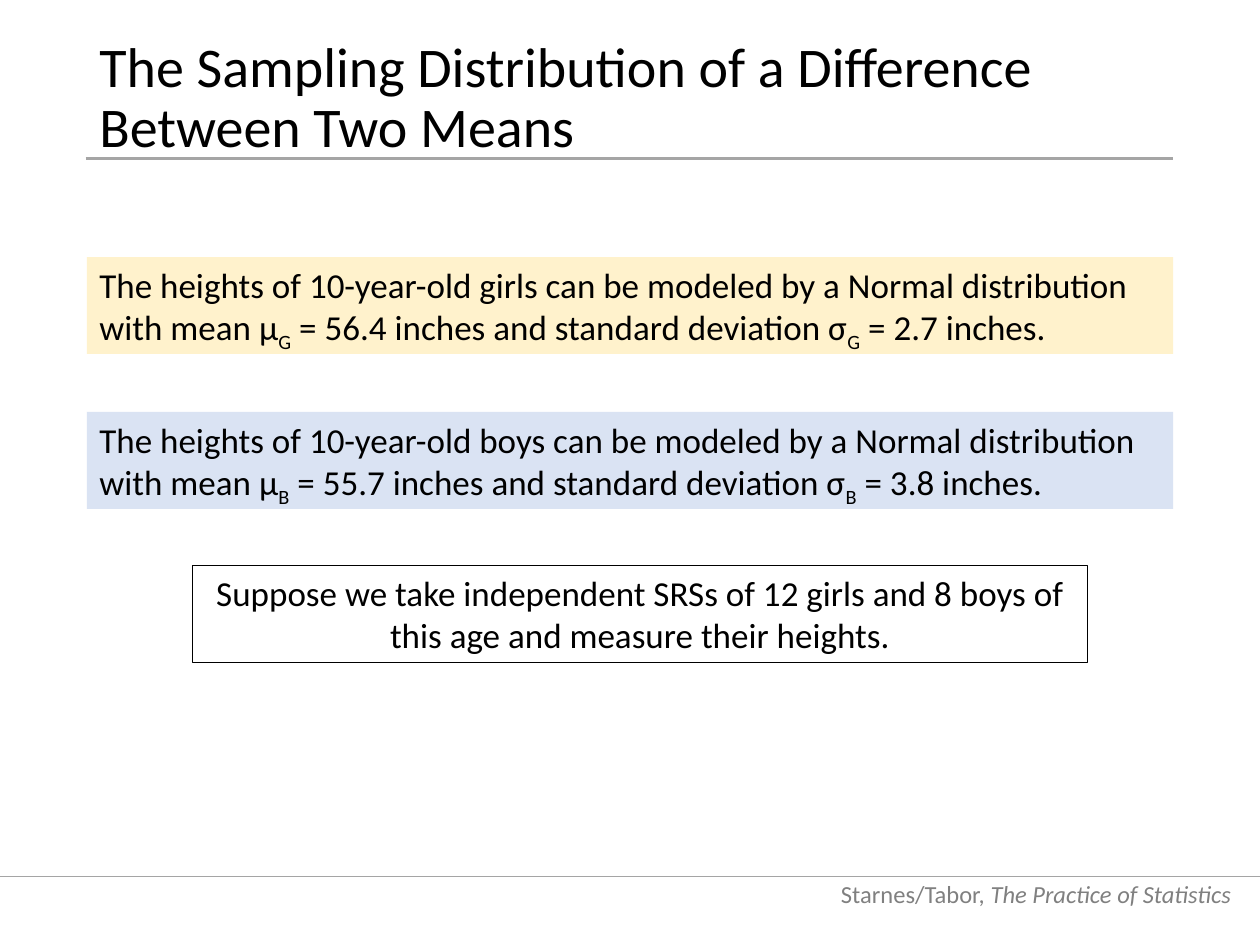
"""Build a slide on the sampling distribution of a difference between two means."""
import pptx
import pptx.dml.color
import pptx.enum.shapes
import pptx.enum.text
import pptx.oxml
import pptx.util

Inches = pptx.util.Inches
Pt = pptx.util.Pt
ALIGN = pptx.enum.text.PP_ALIGN
ANCHOR = pptx.enum.text.MSO_ANCHOR

COLORS = {
    "text": "000000",
    "footer": "808080",
    "rule": "A5A5A5",
    "girls": "FFF2CC",
    "boys": "DAE3F3",
}
LEFT, WIDTH, BOX_HEIGHT = 0.69, 8.62, 0.77


def rgb(name):
    return pptx.dml.color.RGBColor.from_string(COLORS[name])


def format_text(tf, size, color, align, anchor):
    tf.word_wrap = True
    tf.vertical_anchor = anchor
    p = tf.paragraphs[0]
    p.alignment = align
    for r in p.runs:
        r.font.name = "Calibri"
        r.font.size = Pt(size)
        r.font.color.rgb = rgb(color)
    return p


def add_text(s, box, text, size, color, align, anchor):
    tf = s.shapes.add_textbox(*map(Inches, box)).text_frame
    tf.paragraphs[0].text = text
    return format_text(tf, size, color, align, anchor)


def add_rule(s, left, right, y, weight):
    line = s.shapes.add_connector(
        pptx.enum.shapes.MSO_CONNECTOR.STRAIGHT,
        Inches(left), Inches(y), Inches(right), Inches(y))
    line.line.color.rgb = rgb("rule")
    line.line.width = Pt(weight)
    effects = pptx.oxml.parse_xml(
        '<a:effectLst xmlns:a="http://schemas.openxmlformats.org/drawingml/2006/main"/>')
    line._element.spPr.append(effects)


def add_box(s, left, top, width, parts, align=ALIGN.LEFT, fill=None):
    """Add a filled or outlined box; every second part is a subscript."""
    sp = s.shapes.add_shape(
        pptx.enum.shapes.MSO_SHAPE.RECTANGLE,
        Inches(left), Inches(top), Inches(width), Inches(BOX_HEIGHT))
    sp.shadow.inherit = False
    if fill:
        sp.fill.solid()
        sp.fill.fore_color.rgb = rgb(fill)
        sp.line.fill.background()
    else:
        sp.fill.background()
        sp.line.color.rgb = rgb("text")
        sp.line.width = Pt(0.75)
    p = sp.text_frame.paragraphs[0]
    for i, part in enumerate(parts):
        r = p.add_run()
        r.text = part
        if i % 2:
            r.font._element.set("baseline", "-25000")
    format_text(sp.text_frame, 20, "text", align, ANCHOR.TOP)


def add_population(s, top, group, mean, deviation):
    sub = group[0].upper()
    parts = [
        f"The heights of 10-year-old {group} can be modeled by a Normal "
        "distribution with mean µ", sub,
        f" = {mean} inches and standard deviation σ", sub,
        f" = {deviation} inches.",
    ]
    add_box(s, LEFT, top, WIDTH, parts, fill=group)


def add_footer(s):
    p = add_text(s, (6.47, 6.86, 3.4, 0.4),
                 "Starnes/Tabor,", 14, "footer", ALIGN.RIGHT, ANCHOR.BOTTOM)
    r = p.add_run()
    r.text = " The Practice of Statistics"
    r.font.italic = True
    r.font.name = "Calibri"
    r.font.size = Pt(14)
    r.font.color.rgb = rgb("footer")


def main():
    prs = pptx.Presentation()
    prs.slide_width, prs.slide_height = Inches(10), Inches(7.5)
    s = prs.slides.add_slide(prs.slide_layouts[6])
    add_footer(s)
    add_rule(s, 0, 10, 6.96, 0.5)
    add_rule(s, 0.68, 9.31, 1.26, 1.5)
    title = add_text(s, (LEFT, 0.4, WIDTH, 0.78),
                     "The Sampling Distribution of a Difference\vBetween Two Means",
                     32, "text", ALIGN.LEFT, ANCHOR.MIDDLE)
    title.line_spacing = 0.9
    add_population(s, 2.04, "girls", 56.4, 2.7)
    add_population(s, 3.27, "boys", 55.7, 3.8)
    add_box(s, 1.53, 4.49, 7.1,
            ["Suppose we take independent SRSs of 12 girls and 8 boys of "
             "this age and measure their heights."], align=ALIGN.CENTER)
    prs.save("out.pptx")


if __name__ == "__main__":
    main()
